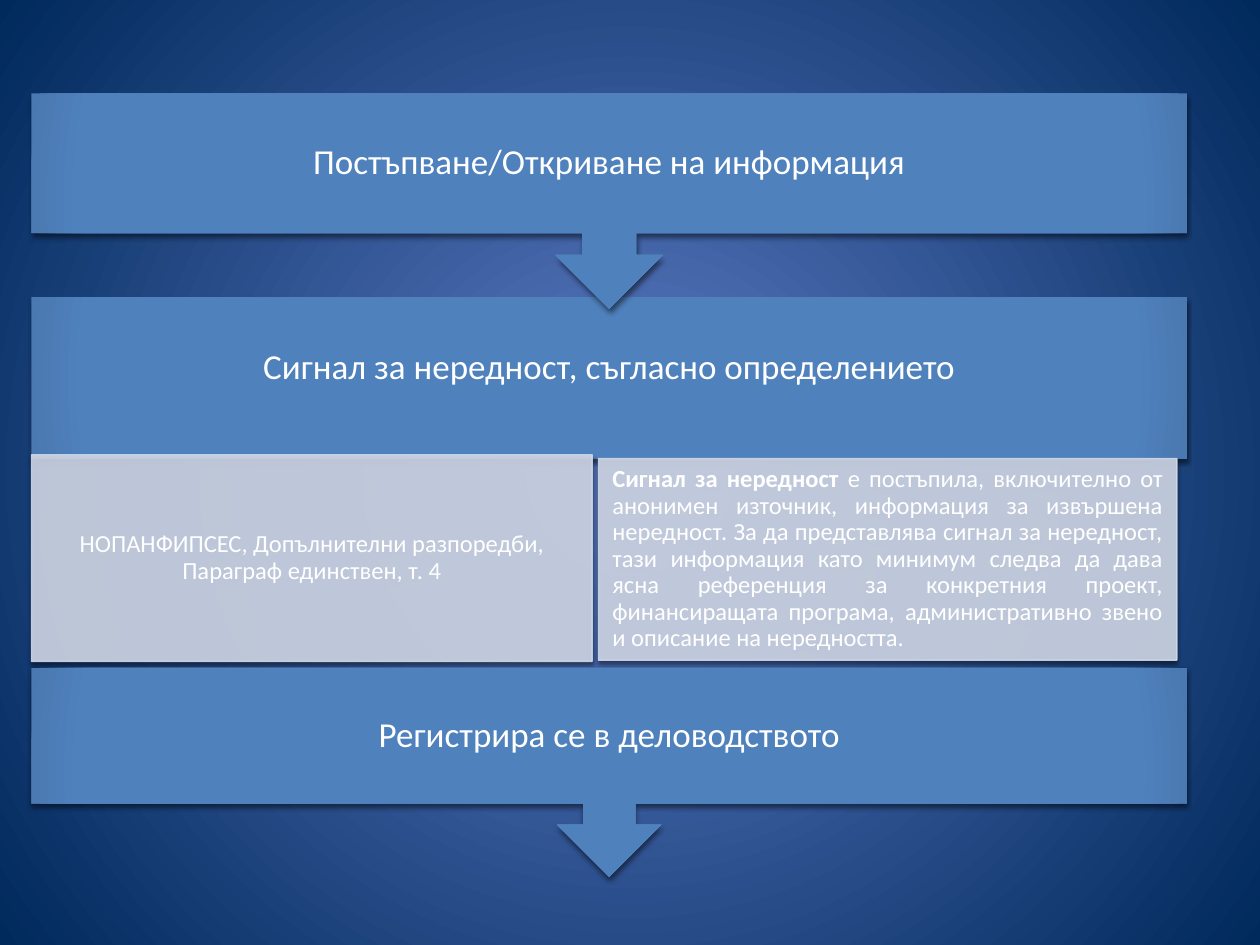
"""Build a slide showing how a signal of irregularity is received and registered."""
from dataclasses import dataclass

from pptx import Presentation
from pptx import util as u
from pptx.dml.color import RGBColor
from pptx.enum import shapes, text
from pptx.oxml import parse_xml
from pptx.oxml.ns import nsdecls, qn


@dataclass(frozen=True)
class Theme:
    font: str = "Calibri"
    ink: str = "FFFFFF"
    card: str = "D0D8E8"
    backdrop: tuple = ((0, "5E7CC5"), (100, "00295C"))
    step: tuple = ((0, "4F81BD"), (90, "4F81BD"), (100, "4A78B0"))
    step_size: int = 20
    card_size: int = 14


THEME = Theme()
LEFT, WIDTH = 0.25, 9.17
RECT = shapes.MSO_SHAPE.RECTANGLE
CALLOUT = shapes.MSO_SHAPE.DOWN_ARROW_CALLOUT
CENTER, JUSTIFY = text.PP_ALIGN.CENTER, text.PP_ALIGN.JUSTIFY


def apply(target, values):
    for name, value in values.items():
        setattr(target, name, value)


def radial(fill, element, stops, focus):
    fill.gradient()
    grad = element.find(".//" + qn("a:gradFill"))
    marks = "".join(f'<a:gs pos="{pos * 1000}"><a:srgbClr val="{color}"/></a:gs>'
                    for pos, color in stops)
    sides = " ".join(f'{side}="{focus * 1000}"' for side in "ltrb")
    grad.getparent().replace(grad, parse_xml(
        f'<a:gradFill {nsdecls("a")} rotWithShape="1"><a:gsLst>{marks}</a:gsLst>'
        f'<a:path path="circle"><a:fillToRect {sides}/></a:path></a:gradFill>'))


def add_box(s, kind, at):
    sp = s.shapes.add_shape(kind, *map(u.Inches, at))
    sp.line.fill.background()
    sp.shadow.inherit = False
    sp.element.spPr.find(qn("a:effectLst")).append(parse_xml(
        f'<a:outerShdw {nsdecls("a")} blurRad="{u.Pt(2.5)}" dist="{u.Pt(2)}" '
        'dir="5400000" rotWithShape="0"><a:srgbClr val="000000">'
        '<a:alpha val="50000"/></a:srgbClr></a:outerShdw>'))
    return sp


def write(sp, runs, size, align, insets):
    tf = sp.text_frame
    sides = ("margin_left", "margin_top", "margin_right", "margin_bottom")
    apply(tf, dict(zip(sides, map(u.Inches, insets))))
    apply(tf, {"word_wrap": True, "vertical_anchor": text.MSO_ANCHOR.MIDDLE})
    p = tf.paragraphs[0]
    apply(p, {"alignment": align, "line_spacing": 0.9})
    for words, bold in runs:
        r = p.add_run()
        r.text = words
        apply(r.font, {"name": THEME.font, "size": u.Pt(size), "bold": bold})
        r.font.color.rgb = RGBColor.from_string(THEME.ink)


def add_step(s, kind, top, height, words, bottom_inset=0.16):
    sp = add_box(s, kind, (LEFT, top, WIDTH, height))
    radial(sp.fill, sp.element.spPr, THEME.step, 100)
    write(sp, [(words, False)], THEME.step_size, CENTER, (0.16, 0.16, 0.16, bottom_inset))


def add_card(s, at, runs, align):
    sp = add_box(s, RECT, at)
    sp.line.width = u.Pt(0.79)
    for fill in (sp.fill, sp.line.fill):
        fill.solid()
        fill.fore_color.rgb = RGBColor.from_string(THEME.card)
    for color in sp.element.spPr.findall(".//" + qn("a:solidFill") + "/" + qn("a:srgbClr")):
        color.append(parse_xml(f'<a:alpha {nsdecls("a")} val="90000"/>'))
    write(sp, runs, THEME.card_size, align, (0.11, 0.02, 0.11, 0.02))


def main():
    prs = Presentation()
    apply(prs, {"slide_width": u.Inches(10), "slide_height": u.Inches(7.5)})
    s = prs.slides.add_slide(prs.slide_layouts[6])
    radial(s.background.fill, s.element, THEME.backdrop, 50)

    add_step(s, RECT, 2.36, 1.28, "Сигнал за нередност, съгласно определението", 0.32)
    add_card(s, (LEFT, 3.61, 4.45, 1.64),
             [("НОПАНФИПСЕС, Допълнителни разпоредби, Параграф единствен, т. 4", False)],
             CENTER)
    add_card(s, (4.75, 3.64, 4.59, 1.6),
             [("Сигнал за нередност ", True),
              ("е постъпила, включително от анонимен източник, информация за извършена "
               "нередност. За да представлява сигнал за нередност, тази информация като "
               "минимум следва да дава ясна референция за конкретния проект, "
               "финансиращата програма, административно звено и описание на "
               "нередността.", False)],
             JUSTIFY)
    add_step(s, CALLOUT, 5.3, 1.66, "Регистрира се в деловодството")
    add_step(s, CALLOUT, 0.74, 1.71, "Постъпване/Откриване на информация")
    prs.save("out.pptx")


if __name__ == "__main__":
    main()
